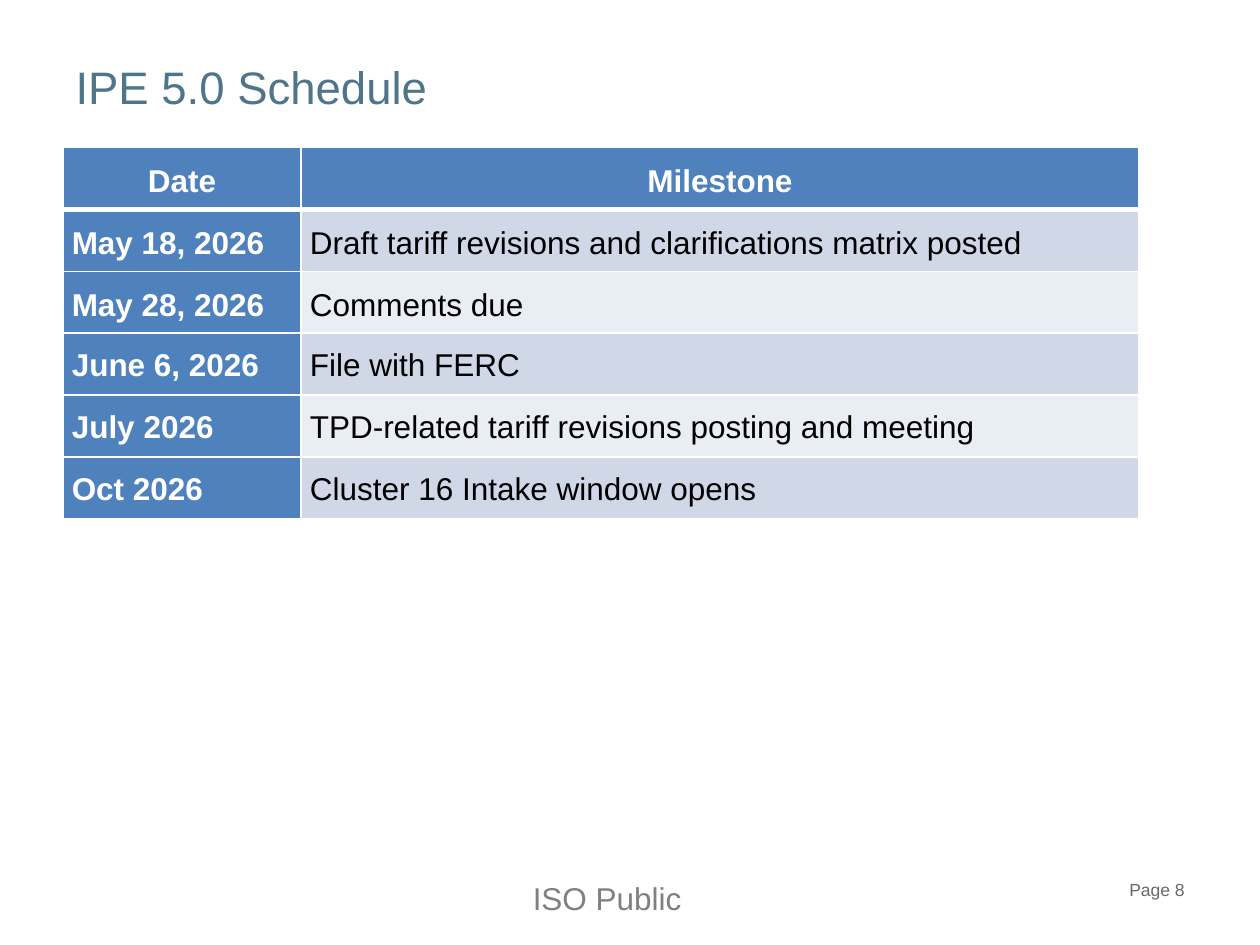
from lxml import etree
from pptx import Presentation
from pptx import util as u
from pptx.dml.color import RGBColor
from pptx.enum import text
from pptx.oxml.ns import qn

FONT = "Arial"
BLUE, WHITE, BLACK = "4F81BD", "FFFFFF", "000000"
BANDS = ["D0D8E8", "E9EDF4"]
HEAD = ["Date", "Milestone"]
DATES = [
    ("May 18, 2026", "Draft tariff revisions and clarifications matrix posted"),
    ("May 28, 2026", "Comments due"),
    ("June 6, 2026", "File with FERC"),
    ("July 2026", "TPD-related tariff revisions posting and meeting"),
    ("Oct 2026", "Cluster 16 Intake window opens"),
]


def color(code):
    return RGBColor.from_string(code)


def add_run(para, words, size, code, bold=False):
    run = para.add_run()
    run.text = words
    font = run.font
    font.name, font.size, font.bold = FONT, u.Pt(size), bold
    font.color.rgb = color(code)


def place(shape, box):
    shape.left, shape.top, shape.width, shape.height = map(u.Inches, box)


def add_title(slide, box, words):
    title = slide.shapes.title
    place(title, box)
    frame = title.text_frame
    frame.vertical_anchor = text.MSO_ANCHOR.TOP
    frame.auto_size = text.MSO_AUTO_SIZE.NONE
    para = frame.paragraphs[0]
    para.alignment = text.PP_ALIGN.LEFT
    add_run(para, words, 26, "4F758B")


def add_note(slide, box, words, size, code, align):
    frame = slide.shapes.add_textbox(*map(u.Inches, box)).text_frame
    frame.word_wrap = True
    para = frame.paragraphs[0]
    para.alignment = align
    add_run(para, words, size, code)


def set_edge(cell, side, width):
    line = etree.SubElement(cell._tc.get_or_add_tcPr(), qn("a:ln" + side),
                            w=str(u.Pt(width)))
    fill = etree.SubElement(line, qn("a:solidFill"))
    etree.SubElement(fill, qn("a:srgbClr"), val=WHITE)


def fill_cell(cell, words, row, col):
    # The rule under the header is heavier than the others
    widths = {"L": 1, "R": 1, "T": 3 if row == 1 else 1, "B": 3 if row == 0 else 1}
    for side, width in widths.items():
        set_edge(cell, side, width)
    strong = row == 0 or col == 0
    cell.fill.solid()
    cell.fill.fore_color.rgb = color(BLUE if strong else BANDS[(row - 1) % 2])
    cell.vertical_anchor = text.MSO_ANCHOR.MIDDLE
    cell.margin_left = cell.margin_right = u.Inches(0.07)
    cell.margin_top = u.Inches(0.01 if row < 3 else 0)
    cell.margin_bottom = 0

    para = cell.text_frame.paragraphs[0]
    para.alignment = text.PP_ALIGN.CENTER if row == 0 else text.PP_ALIGN.LEFT
    para.line_spacing = 1.15 if row < 3 else 1.07
    if row >= 3:
        para.space_after = u.Pt(8)
    add_run(para, words, 18, WHITE if strong else BLACK, strong)


def add_dates(slide, box, first):
    rows = [HEAD, *DATES]
    table = slide.shapes.add_table(len(rows), 2, *map(u.Inches, box)).table
    table.columns[0].width = u.Inches(first)
    table.columns[1].width = u.Inches(box[2] - first)
    for r, row in enumerate(rows):
        table.rows[r].height = u.Inches(box[3] / len(rows))
        for c, words in enumerate(row):
            fill_cell(table.cell(r, c), words, r, c)


def main():
    deck = Presentation()
    deck.slide_width, deck.slide_height = u.Inches(10), u.Inches(7.5)
    slide = deck.slides.add_slide(deck.slide_layouts[5])

    # Title and schedule
    add_title(slide, (0.5, 0.42, 9, 1.25), "IPE 5.0 Schedule")
    add_dates(slide, (0.5, 1.17, 8.54, 2.95), 1.89)

    # Footer
    add_note(slide, (7.17, 6.93, 2.33, 0.4), "Page 8", 10, "686868",
             text.PP_ALIGN.RIGHT)
    add_note(slide, (4.13, 6.93, 1.42, 0.4), "ISO Public", 18, "808080",
             text.PP_ALIGN.LEFT)
    deck.save("out.pptx")


if __name__ == "__main__":
    main()
